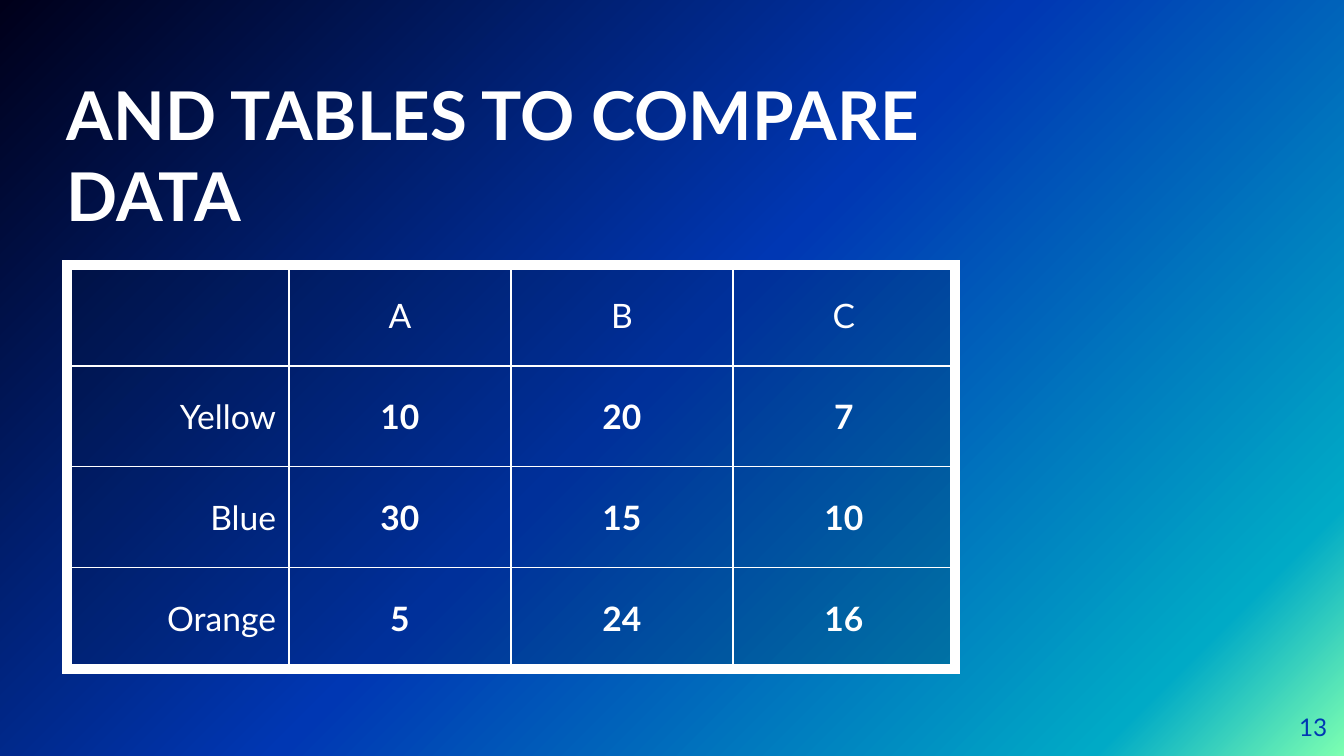
"""Build a slide with a gradient background, a title and a comparison table."""
import lxml.etree
import pptx
import pptx.dml.color
import pptx.enum.text
import pptx.oxml.ns
import pptx.util

ALIGN = pptx.enum.text.PP_ALIGN
ANCHOR = pptx.enum.text.MSO_ANCHOR
FONT, WHITE, NAVY, BLUE = "Lato", "FFFFFF", "001230", "0037B3"
SLIDE_SIZE = (1344, 756)
GRADIENT = [(0, "7DFFB1"), (12, "00AAC6"), (51, BLUE), (100, "00001A")]
TITLE = "AND TABLES TO COMPARE DATA"
PAGE_NUMBER = "13"
ROWS = [
    ("", "A", "B", "C"),
    ("Yellow", "10", "20", "7"),
    ("Blue", "30", "15", "10"),
    ("Orange", "5", "24", "16"),
]
TABLE_LEFT, TABLE_TOP, COLUMN_WIDTH, ROW_HEIGHT = 67, 265, 222, 101
CELL_MARGINS = (13, 9, 13, 9)
FILL_ALPHA = 19
THICK, THIN = 6, 0.75


def px(value):
    return pptx.util.Emu(round(value * 914400 / 134.4))


def rgb(color):
    return pptx.dml.color.RGBColor.from_string(color)


def add_element(parent, tag, **attributes):
    element = lxml.etree.SubElement(parent, pptx.oxml.ns.qn(tag))
    for name, value in attributes.items():
        element.set(name, str(value))
    return element


def set_margins(target, margins):
    sides = ("left", "top", "right", "bottom")
    for side, margin in zip(sides, margins):
        setattr(target, f"margin_{side}", px(margin))


def style_paragraph(paragraph, size, color, alignment, bold=False):
    paragraph.alignment = alignment
    font = paragraph.font
    font.name, font.size, font.bold = FONT, pptx.util.Pt(size), bold
    font.color.rgb = rgb(color)


def add_text(slide, text, box, anchor, size, color, alignment, bold=False):
    frame = slide.shapes.add_textbox(*map(px, box)).text_frame
    frame.word_wrap = True
    frame.vertical_anchor = anchor
    set_margins(frame, (0, 0, 0, 0))
    frame.text = text
    style_paragraph(frame.paragraphs[0], size, color, alignment, bold)


def paint_background(slide):
    fill = slide.background.fill
    fill.gradient()
    fill.gradient_angle = 135
    stops = slide.background._cSld.find(".//" + pptx.oxml.ns.qn("a:gsLst"))
    stops.clear()
    for position, color in GRADIENT:
        stop = add_element(stops, "a:gs", pos=position * 1000)
        add_element(stop, "a:srgbClr", val=color)


def style_cell(cell, row, column, last_row, last_column):
    cell.fill.solid()
    cell.fill.fore_color.rgb = rgb(NAVY)
    properties = cell._tc.get_or_add_tcPr()
    color = properties.find(".//" + pptx.oxml.ns.qn("a:srgbClr"))
    add_element(color, "a:alpha", val=FILL_ALPHA * 1000)
    outer_edges = {
        "L": column == 0,
        "R": column == last_column,
        "T": row == 0,
        "B": row == last_row,
    }
    for index, (side, outer) in enumerate(outer_edges.items()):
        width = pptx.util.Pt(THICK if outer else THIN)
        line = add_element(properties, f"a:ln{side}", w=int(width))
        add_element(add_element(line, "a:solidFill"), "a:srgbClr", val=WHITE)
        properties.insert(index, line)


def add_comparison_table(slide):
    row_count, column_count = len(ROWS), len(ROWS[0])
    box = (TABLE_LEFT, TABLE_TOP, COLUMN_WIDTH * column_count, ROW_HEIGHT * row_count)
    table = slide.shapes.add_table(row_count, column_count, *map(px, box)).table
    table.first_row = table.horz_banding = False
    for row, values in enumerate(ROWS):
        for column, value in enumerate(values):
            cell = table.cell(row, column)
            cell.text = value
            cell.vertical_anchor = ANCHOR.MIDDLE
            set_margins(cell, CELL_MARGINS)
            alignment = ALIGN.CENTER if column else ALIGN.RIGHT
            bold = row > 0 and column > 0
            style_paragraph(cell.text_frame.paragraphs[0], 18, WHITE, alignment, bold)
            style_cell(cell, row, column, row_count - 1, column_count - 1)


def main():
    presentation = pptx.Presentation()
    presentation.slide_width, presentation.slide_height = map(px, SLIDE_SIZE)
    slide = presentation.slides.add_slide(presentation.slide_layouts[6])
    paint_background(slide)
    add_text(slide, TITLE, (67, 109, 886, 126), ANCHOR.BOTTOM, 36, WHITE, ALIGN.LEFT, True)
    add_comparison_table(slide)
    add_text(slide, PAGE_NUMBER, (1246, 698, 81, 58), ANCHOR.MIDDLE, 13, BLUE, ALIGN.RIGHT)
    presentation.save("out.pptx")


if __name__ == "__main__":
    main()
